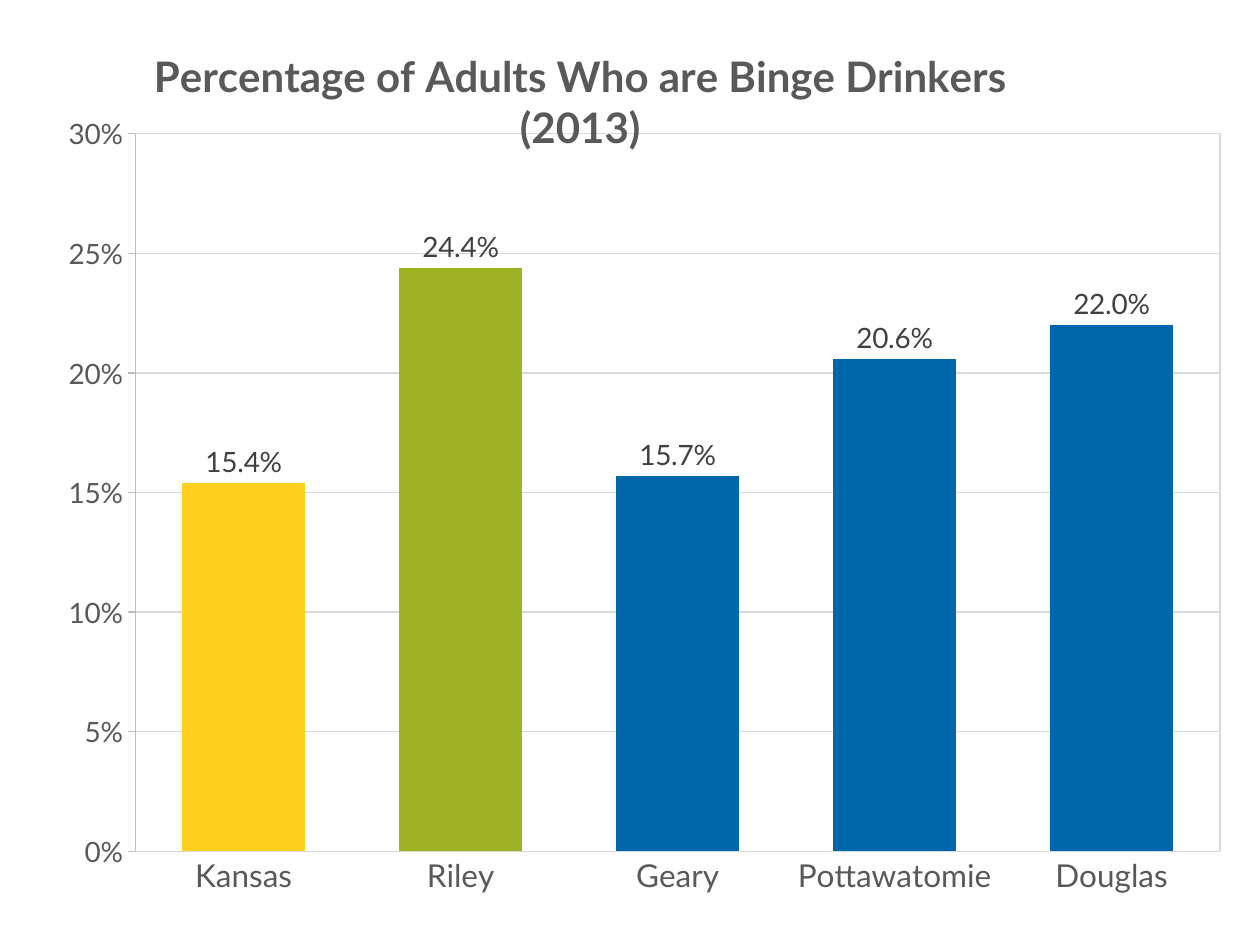
from lxml import etree
from pptx import Presentation
from pptx.chart.data import CategoryChartData
from pptx.dml.color import RGBColor
from pptx.enum.chart import XL_CHART_TYPE, XL_LABEL_POSITION, XL_TICK_MARK
from pptx.oxml import parse_xml
from pptx.oxml.ns import nsdecls, qn
from pptx.util import Inches, Pt

COLUMNS = XL_CHART_TYPE.COLUMN_CLUSTERED
OUTSIDE_END = XL_LABEL_POSITION.OUTSIDE_END
TICK_NONE, TICK_OUTSIDE = XL_TICK_MARK.NONE, XL_TICK_MARK.OUTSIDE

YELLOW = RGBColor(0xFF, 0xCF, 0x1D)
GREEN = RGBColor(0x9E, 0xB3, 0x23)
BLUE = RGBColor(0x00, 0x67, 0xAA)
DARK_GREEN = RGBColor(0x06, 0x62, 0x43)
TEXT_GRAY = RGBColor(0x59, 0x59, 0x59)
LABEL_GRAY = RGBColor(0x40, 0x40, 0x40)
AXIS_GRAY = RGBColor(0xBD, 0xBD, 0xBD)
GRID_GRAY = RGBColor(0xD9, 0xD9, 0xD9)
FONT = "Lato"

TITLE = "Percentage of Adults Who are Binge Drinkers (2013)"
RATES = [
    ("Kansas", 0.154, YELLOW),
    ("Riley", 0.244, GREEN),
    ("Geary", 0.157, BLUE),
    ("Pottawatomie", 0.206, BLUE),
    ("Douglas", 0.22, BLUE),
]
TITLE_PLACE = {"xMode": "edge", "yMode": "edge", "x": 0.11, "y": 0.03}
PLOT_PLACE = {"layoutTarget": "inner", "xMode": "edge", "yMode": "edge",
              "x": 0.101, "y": 0.134, "w": 0.876, "h": 0.777}


def style_font(font, size, color, bold=False):
    font.name, font.size, font.bold = FONT, Pt(size), bold
    font.color.rgb = color


def style_line(line, color):
    line.color.rgb = color
    line.width = Pt(0.75)


def place_part(part, index, place):
    for layout in part.findall(qn("c:layout")):
        part.remove(layout)
    layout = etree.Element(qn("c:layout"))
    manual = etree.SubElement(layout, qn("c:manualLayout"))
    for name, value in place.items():
        etree.SubElement(manual, qn(f"c:{name}")).set("val", str(value))
    part.insert(index, layout)


def add_title(chart):
    chart.has_title = True
    para = chart.chart_title.text_frame.paragraphs[0]
    span = para.add_run()
    span.text = TITLE
    style_font(span.font, 24, TEXT_GRAY, True)
    place_part(chart.chart_title.format.line and chart._chartSpace.chart.find(qn("c:title")), 1, TITLE_PLACE)


def style_axes(chart):
    counties, percents = chart.category_axis, chart.value_axis
    counties.major_tick_mark = TICK_NONE
    percents.major_tick_mark = TICK_OUTSIDE
    percents.minimum_scale, percents.maximum_scale = 0, 0.3
    percents.major_unit = 0.05
    percents.tick_labels.number_format = "0%"
    percents.tick_labels.number_format_is_linked = False
    style_line(percents.major_gridlines.format.line, GRID_GRAY)
    for axis, size, color in ((counties, 18, GRID_GRAY), (percents, 16, AXIS_GRAY)):
        axis.minor_tick_mark = TICK_NONE
        style_font(axis.tick_labels.font, size, TEXT_GRAY)
        style_line(axis.format.line, color)


def style_columns(chart):
    plot = chart.plots[0]
    plot.gap_width = 77
    plot.vary_by_categories = False
    series = plot.series[0]
    series.format.fill.solid()
    series.format.fill.fore_color.rgb = DARK_GREEN
    for index, (_, _, color) in enumerate(RATES):
        fill = series.points[index].format.fill
        fill.solid()
        fill.fore_color.rgb = color
    labels = series.data_labels
    labels.show_value = True
    labels.number_format = "0.0%"
    labels.number_format_is_linked = False
    labels.position = OUTSIDE_END
    style_font(labels.font, 16, LABEL_GRAY)


def frame_plot(chart):
    area = chart._chartSpace.chart.plotArea
    place_part(area, 0, PLOT_PLACE)
    area.append(parse_xml(
        f'<c:spPr {nsdecls("c", "a")}><a:noFill/><a:ln w="{Pt(0.75)}"><a:solidFill>'
        f'<a:srgbClr val="{GRID_GRAY}"/></a:solidFill></a:ln></c:spPr>'))


def main():
    """Build the slide with the column chart of binge drinking rates."""
    deck = Presentation()
    deck.slide_width, deck.slide_height = Inches(10), Inches(7.5)
    page = deck.slides.add_slide(deck.slide_layouts[6])
    data = CategoryChartData(number_format="0.0%")
    data.categories = [county for county, _, _ in RATES]
    data.add_series("Series 1", [rate for _, rate, _ in RATES])
    chart = page.shapes.add_chart(
        COLUMNS, Inches(0.08), Inches(0.08), Inches(9.83), Inches(7.33), data).chart
    chart.has_legend = False
    chart.font.name, chart.font.size = "Calibri", Pt(10)
    add_title(chart)
    style_axes(chart)
    style_columns(chart)
    frame_plot(chart)
    deck.save("out.pptx")


if __name__ == "__main__":
    main()
